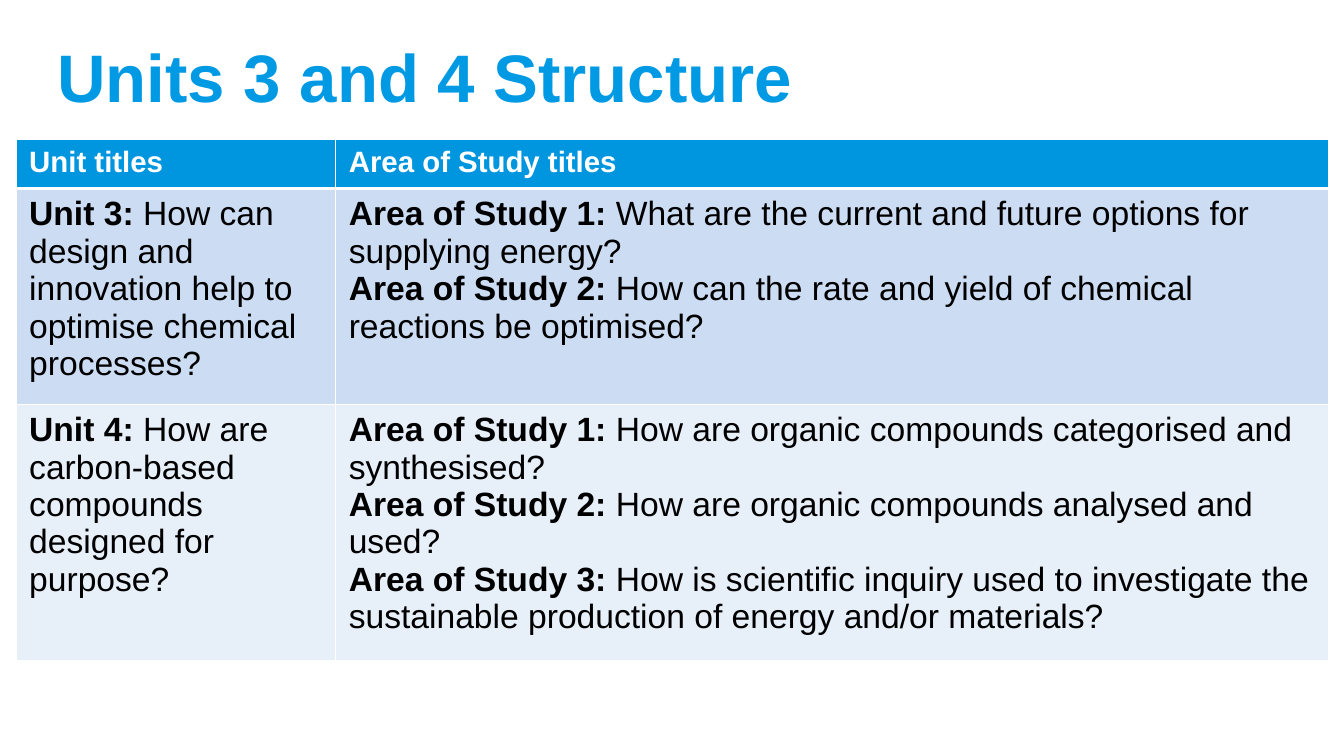
from pptx import Presentation
from pptx.dml.color import RGBColor
from pptx.enum.text import MSO_ANCHOR
from pptx.oxml import parse_xml
from pptx.oxml.ns import nsdecls
from pptx.util import Inches, Pt

TITLE_BLUE = RGBColor(0x00, 0x99, 0xE3)
HEADER_BLUE = RGBColor(0x00, 0x96, 0xDF)
BAND_DARK = RGBColor(0xCC, 0xDD, 0xF3)
BAND_LIGHT = RGBColor(0xE7, 0xEF, 0xF9)
WHITE = RGBColor(0xFF, 0xFF, 0xFF)
BLACK = RGBColor(0x00, 0x00, 0x00)
FONT = "Arial"

# Each cell is a list of paragraphs: (bold label, plain text)
ROWS = [
    [[("Unit titles", "")], [("Area of Study titles", "")]],
    [
        [("Unit 3: ", "How can design and innovation help to optimise chemical processes?")],
        [
            ("Area of Study 1: ", "What are the current and future options for supplying energy?"),
            ("Area of Study 2: ", "How can the rate and yield of chemical reactions be optimised?"),
        ],
    ],
    [
        [("Unit 4: ", "How are carbon-based compounds designed for purpose?")],
        [
            ("Area of Study 1: ", "How are organic compounds categorised and synthesised?"),
            ("Area of Study 2: ", "How are organic compounds analysed and used?"),
            ("Area of Study 3: ", "How is scientific inquiry used to investigate the "
                                  "sustainable production of energy and/or materials?"),
        ],
    ],
]
# Height, fill, text size, text colour and bottom border of each row
ROW_STYLES = [
    (0.47, HEADER_BLUE, 21, WHITE, 3),
    (1.98, BAND_DARK, 24, BLACK, 1),
    (2.37, BAND_LIGHT, 24, BLACK, 1),
]
COL_WIDTHS = [3.17, 9.85]


def set_borders(cell, top, bottom):
    tcPr = cell._tc.get_or_add_tcPr()
    sides = [("lnL", 1), ("lnR", 1), ("lnT", top), ("lnB", bottom)]
    for i, (side, width) in enumerate(sides):
        tcPr.insert(i, parse_xml(
            f'<a:{side} {nsdecls("a")} w="{Pt(width)}"><a:solidFill>'
            f'<a:srgbClr val="{WHITE}"/></a:solidFill></a:{side}>'))


prs = Presentation()
prs.slide_width, prs.slide_height = Inches(13.33), Inches(7.5)
s = prs.slides.add_slide(prs.slide_layouts[6])

title = s.shapes.add_textbox(Inches(0.47), Inches(0.13), Inches(12.7), Inches(1.25))
tf = title.text_frame
tf.word_wrap = True
tf.vertical_anchor = MSO_ANCHOR.MIDDLE
p = tf.paragraphs[0]
p.text = "Units 3 and 4 Structure"
p.font.name, p.font.size, p.font.bold = FONT, Pt(48), True
p.font.color.rgb = TITLE_BLUE

table = s.shapes.add_table(
    len(ROWS), len(COL_WIDTHS), Inches(0.16), Inches(1.38),
    Inches(sum(COL_WIDTHS)), Inches(sum(style[0] for style in ROW_STYLES))).table
for column, width in zip(table.columns, COL_WIDTHS):
    column.width = Inches(width)

top = 1
for row, contents, style in zip(table.rows, ROWS, ROW_STYLES):
    height, fill, size, color, bottom = style
    row.height = Inches(height)
    for cell, paragraphs in zip(row.cells, contents):
        cell.fill.solid()
        cell.fill.fore_color.rgb = fill
        cell.margin_left = cell.margin_right = Inches(0.13)
        cell.margin_top = cell.margin_bottom = Inches(0.07)
        set_borders(cell, top, bottom)
        tf = cell.text_frame
        for i, (label, text) in enumerate(paragraphs):
            p = tf.add_paragraph() if i else tf.paragraphs[0]
            p.font.name, p.font.size = FONT, Pt(size)
            p.font.color.rgb = color
            for words, bold in ((label, True), (text, False)):
                if words:
                    r = p.add_run()
                    r.text = words
                    r.font.bold = bold
    top = bottom

prs.save("out.pptx")
